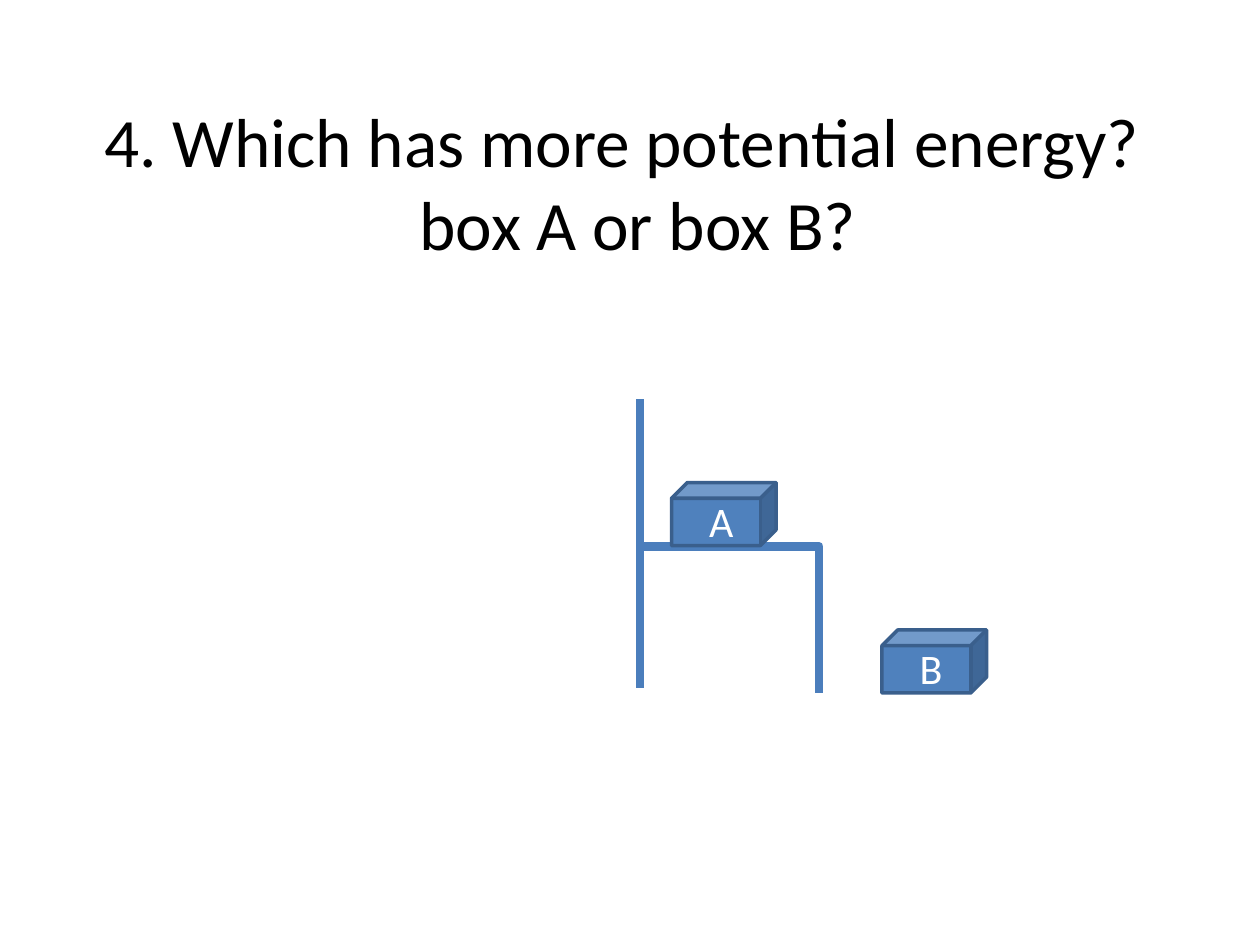
from dataclasses import dataclass

from lxml.etree import SubElement
from pptx import Presentation
from pptx.dml.color import RGBColor
from pptx.enum.shapes import MSO_CONNECTOR as Connector, MSO_SHAPE as Shape
from pptx.enum.text import MSO_ANCHOR as Anchor, MSO_AUTO_SIZE as AutoSize, PP_ALIGN as Align
from pptx.oxml.ns import qn
from pptx.util import Inches, Pt


@dataclass(frozen=True)
class Theme:
    font: str = "Calibri"
    title_size: float = 39.6
    label_size: float = 24
    title: RGBColor = RGBColor(0x00, 0x00, 0x00)
    label: RGBColor = RGBColor(0xFF, 0xFF, 0xFF)
    chair: RGBColor = RGBColor(0x4B, 0x7E, 0xBC)
    box: RGBColor = RGBColor(0x4F, 0x81, 0xBD)
    box_edge: RGBColor = RGBColor(0x3A, 0x5F, 0x8C)
    chair_width: float = 5
    edge_width: float = 2


THEME = Theme()


def add_text(slide, text, left, top, width, height, size, color):
    frame = slide.shapes.add_textbox(
        Inches(left), Inches(top), Inches(width), Inches(height)).text_frame
    frame.word_wrap = True
    frame.text = text
    paragraph = frame.paragraphs[0]
    paragraph.font.name = THEME.font
    paragraph.font.size = Pt(size)
    paragraph.font.color.rgb = color
    return frame


def add_title(slide, text):
    frame = add_text(slide, text, 0.5, 0.3, 9, 2.28, THEME.title_size, THEME.title)
    frame.vertical_anchor = Anchor.MIDDLE
    frame.paragraphs[0].alignment = Align.CENTER


def add_chair_part(slide, kind, x1, y1, x2, y2):
    part = slide.shapes.add_connector(
        kind, Inches(x1), Inches(y1), Inches(x2), Inches(y2))
    part.line.color.rgb = THEME.chair
    part.line.width = Pt(THEME.chair_width)
    SubElement(part.element.spPr, qn("a:effectLst"))
    return part


def add_chair(slide, left, top, right, bottom):
    # Back, seat and front leg: a bent line turned by 270 degrees,
    # so its unturned frame has width and height swapped about the centre
    center_x, center_y = (left + right) / 2, (top + bottom) / 2
    half_w, half_h = (bottom - top) / 2, (right - left) / 2
    outline = add_chair_part(slide, Connector.ELBOW,
                             center_x + half_w, center_y - half_h,
                             center_x - half_w, center_y + half_h)
    outline.element.spPr.find(qn("a:xfrm")).set("rot", str(270 * 60000))

    # Rear leg
    add_chair_part(slide, Connector.STRAIGHT, left, 4.3, left, 5.46)


def add_box(slide, left, top):
    box = slide.shapes.add_shape(
        Shape.CUBE, Inches(left), Inches(top), Inches(0.83), Inches(0.5))
    box.shadow.inherit = False
    box.fill.solid()
    box.fill.fore_color.rgb = THEME.box
    box.line.color.rgb = THEME.box_edge
    box.line.width = Pt(THEME.edge_width)


def add_box_label(slide, letter, box_left, box_top):
    frame = add_text(slide, letter, box_left + 0.2, box_top + 0.05, 0.75, 0.5,
                     THEME.label_size, THEME.label)
    frame.auto_size = AutoSize.SHAPE_TO_FIT_TEXT


def main():
    deck = Presentation()
    deck.slide_width, deck.slide_height = Inches(10), Inches(7.5)
    slide = deck.slides.add_slide(deck.slide_layouts[6])

    # Question; the vertical tab is a line break
    add_title(slide, "4. Which has more potential energy? \v box A or box B?")

    # Chair with one box on the seat and one on the floor
    add_chair(slide, 5.08, 3.17, 6.5, 5.5)
    boxes = {"B": (7, 5), "A": (5.33, 3.83)}
    for left, top in boxes.values():
        add_box(slide, left, top)
    for letter in sorted(boxes):
        add_box_label(slide, letter, *boxes[letter])

    deck.save("out.pptx")


if __name__ == "__main__":
    main()
